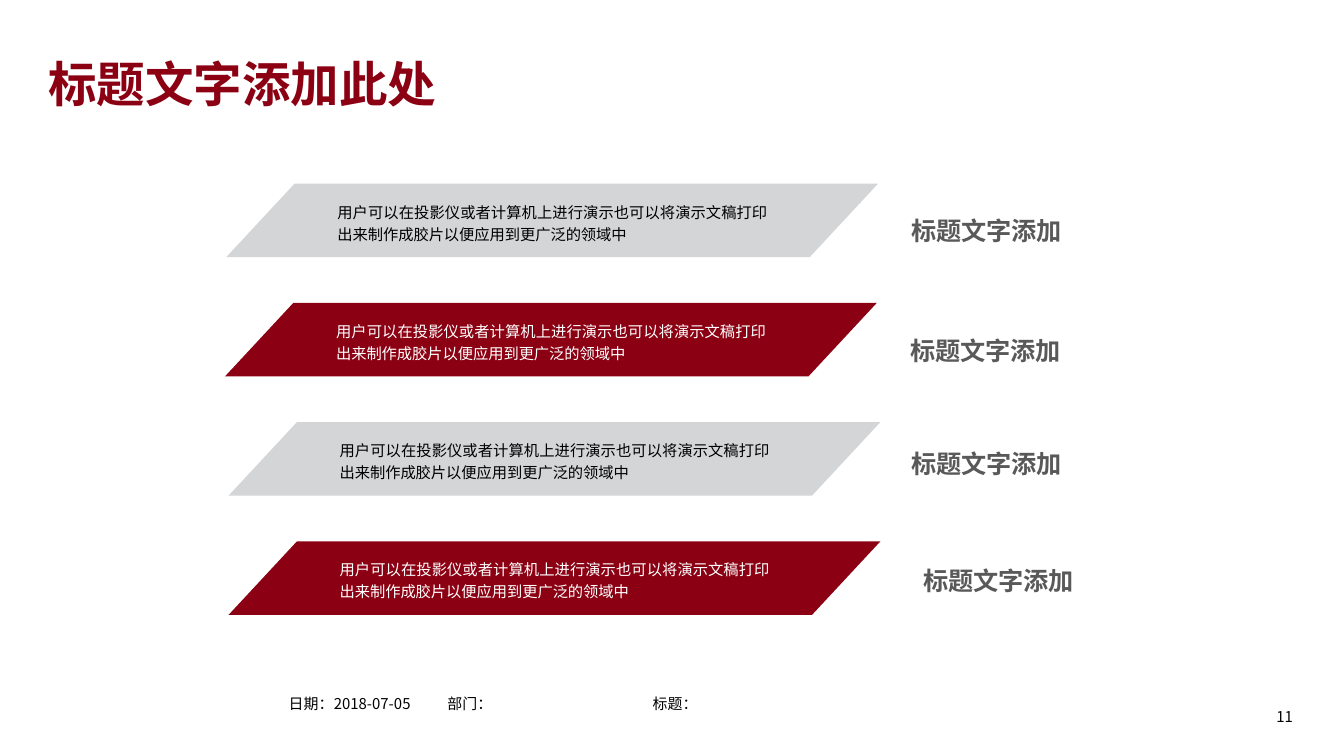
from lxml import etree
from pptx import Presentation
from pptx.dml.color import RGBColor
from pptx.enum.shapes import MSO_SHAPE
from pptx.enum.text import MSO_AUTO_SIZE, PP_ALIGN
from pptx.oxml.ns import qn
from pptx.util import Pt

PARALLELOGRAM = MSO_SHAPE.PARALLELOGRAM
LEFT, RIGHT, JUSTIFY = PP_ALIGN.LEFT, PP_ALIGN.RIGHT, PP_ALIGN.JUSTIFY
GROW = MSO_AUTO_SIZE.SHAPE_TO_FIT_TEXT

FONT = "Noto Sans CJK SC"
RED, SILVER, GRAY = "8B0012", "D4D5D7", "595959"
BLACK, WHITE = "000000", "FFFFFF"

BODY = "用户可以在投影仪或者计算机上进行演示也可以将演示文稿打印出来制作成胶片以便应用到更广泛的领域中"
LABEL = "标题文字添加"


def color(value):
    return RGBColor.from_string(value)


def add_text(shapes, box, text, size, ink, bold=False, align=LEFT, spacing=None):
    textbox = shapes.add_textbox(*map(Pt, box))
    frame = textbox.text_frame
    frame.word_wrap = True
    frame.auto_size = GROW
    frame.text = text
    paragraph = frame.paragraphs[0]
    paragraph.alignment = align
    if spacing:
        paragraph.line_spacing = spacing
    font = paragraph.runs[0].font
    font.size, font.bold, font.name = Pt(size), bold, FONT
    font.color.rgb = color(ink)
    # East Asian typeface follows the latin one
    properties = paragraph.runs[0]._r.get_or_add_rPr()
    etree.SubElement(properties, qn("a:ea")).set("typeface", FONT)


def add_title(slide, box):
    add_text(slide.shapes, box, "标题文字添加此处", 26, RED, bold=True, spacing=1.14)


def add_ribbon_row(slide, box, label_corner, fill, ink):
    left, top, width, height = box
    row = slide.shapes.add_group_shape().shapes

    # Slanted ribbon
    ribbon = row.add_shape(PARALLELOGRAM, *map(Pt, box))
    ribbon.adjustments[0] = 0.93
    ribbon.shadow.inherit = False
    ribbon.fill.solid()
    ribbon.fill.fore_color.rgb = color(fill)
    ribbon.line.fill.background()

    # Description on the ribbon and heading beside it
    add_text(row, (left + 52.5, top + 4.8, 244.8, 31), BODY, 8.2, ink,
             align=JUSTIFY, spacing=1.2)
    add_text(row, (*label_corner, 108.7, 26.6), LABEL, 13.5, GRAY,
             bold=True, align=JUSTIFY, spacing=1.2)


def add_footer(slide, box):
    left, top, width, height = box
    fields = [(0, "日期：2018-07-05"), (85, "部门："), (195, "标题：")]
    for offset, text in fields:
        add_text(slide.shapes, (left + offset, top, 82, height), text, 8, BLACK)

    # Page number at the right end, slightly lower
    add_text(slide.shapes, (left + width - 23.8, top + 7.2, 23.8, height),
             "11", 8, BLACK, align=RIGHT)


def main():
    presentation = Presentation()
    presentation.slide_width, presentation.slide_height = Pt(720), Pt(405)
    slide = presentation.slides.add_slide(presentation.slide_layouts[6])

    add_title(slide, (18.7, 20.9, 266.4, 43.2))

    # Ribbon left edge and label corner of each row
    rows = [
        (121.2, (481, 108.7)),
        (120.5, (480.7, 172.8)),
        (122.4, (481, 233.3)),
        (122.4, (487.4, 295.9)),
    ]
    schemes = [(SILVER, BLACK), (RED, WHITE)]
    for index, (left, label_corner) in enumerate(rows):
        fill, ink = schemes[index % 2]
        add_ribbon_row(slide, (left, 98.4 + index * 63.9, 349.2, 39.4),
                       label_corner, fill, ink)

    add_footer(slide, (147.6, 368.6, 552.2, 16.6))
    presentation.save("out.pptx")


if __name__ == "__main__":
    main()
